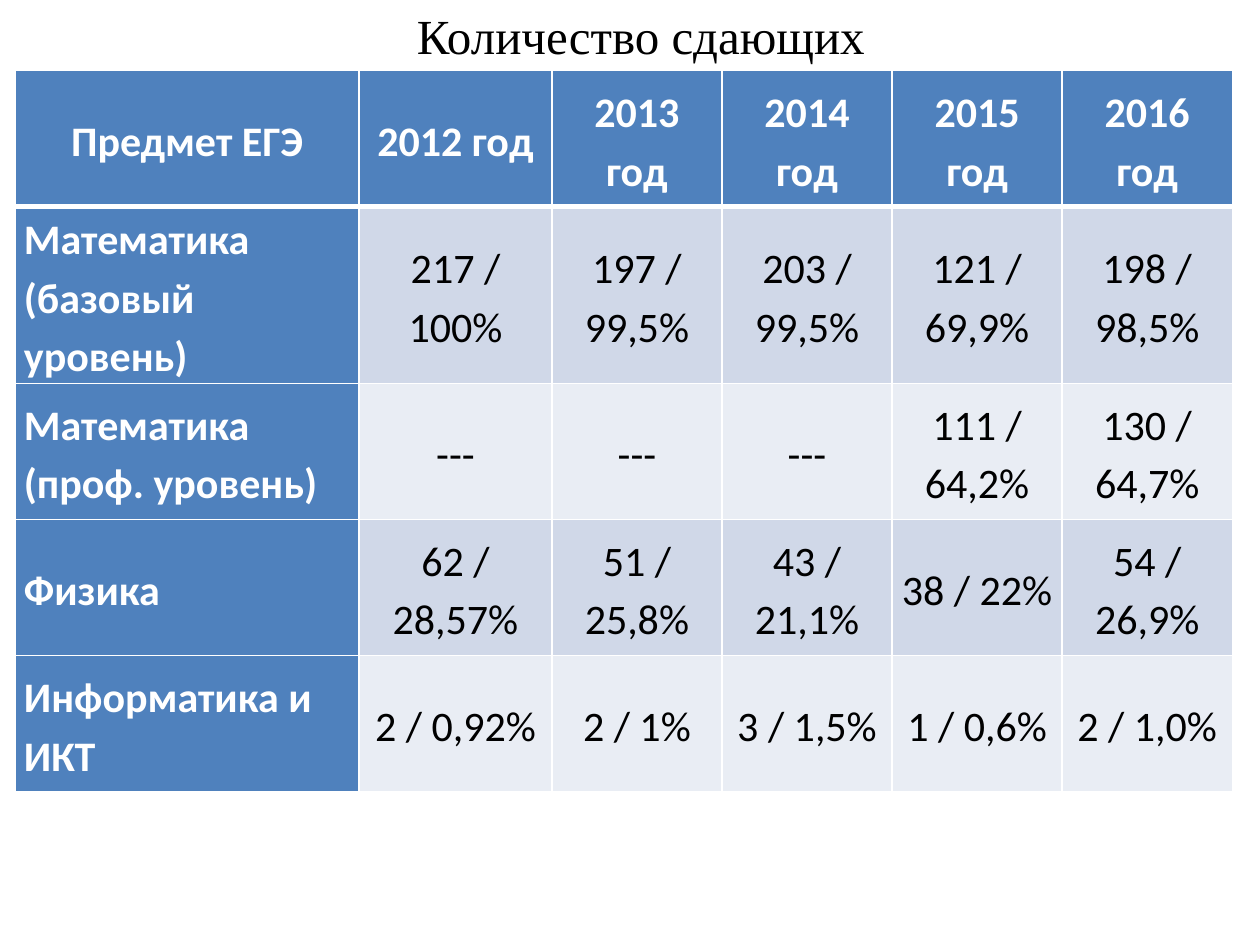
import pptx
import pptx.dml.color
import pptx.enum.text
import pptx.oxml.ns
import pptx.util
from lxml import etree

Inches = pptx.util.Inches
Pt = pptx.util.Pt
RGBColor = pptx.dml.color.RGBColor
PP_ALIGN = pptx.enum.text.PP_ALIGN
MIDDLE = pptx.enum.text.MSO_ANCHOR.MIDDLE
qn = pptx.oxml.ns.qn

# Content
TITLE = "Количество сдающих"
EXAM_ROWS = [
    ("Предмет ЕГЭ", "2012 год", "2013 год", "2014 год", "2015 год", "2016 год"),
    ("Математика (базовый уровень)", "217 / 100%", "197 / 99,5%",
     "203 / 99,5%", "121 / 69,9%", "198 / 98,5%"),
    ("Математика (проф. уровень)", "---", "---", "---", "111 / 64,2%", "130 / 64,7%"),
    ("Физика", "62 / 28,57%", "51 / 25,8%", "43 / 21,1%", "38 / 22%", "54 / 26,9%"),
    ("Информатика и ИКТ", "2 / 0,92%", "2 / 1%", "3 / 1,5%", "1 / 0,6%", "2 / 1,0%"),
]
COLUMN_WIDTHS = [2.73, 1.53] + [1.35] * 4
ROW_HEIGHT = 1.08

# Colours
BLACK = RGBColor(0x00, 0x00, 0x00)
WHITE = RGBColor(0xFF, 0xFF, 0xFF)
HEADING_BLUE = RGBColor(0x4F, 0x81, 0xBD)
BANDS = [RGBColor(0xE9, 0xED, 0xF4), RGBColor(0xD0, 0xD8, 0xE8)]


def apply_format(target, values):
    for name, value in values.items():
        setattr(target, name, value)


def add_borders(cell, widths):
    """Draw white lines on the cell's sides; call before the fill is set."""
    properties = cell._tc.get_or_add_tcPr()
    for side, width in widths.items():
        line = etree.SubElement(properties, qn(f"a:ln{side}"), w=str(Pt(width)))
        fill = etree.SubElement(line, qn("a:solidFill"))
        etree.SubElement(fill, qn("a:srgbClr"), val=str(WHITE))


def fill_cell(cell, text, row, column):
    is_heading = row == 0 or column == 0
    add_borders(cell, {"L": 1, "R": 1, "T": 3 if row == 1 else 1, "B": 3 if row == 0 else 1})
    cell.fill.solid()
    cell.fill.fore_color.rgb = HEADING_BLUE if is_heading else BANDS[row % 2]
    apply_format(cell, {
        "margin_left": Inches(0.07), "margin_right": Inches(0.07),
        "margin_top": 0, "margin_bottom": 0, "vertical_anchor": MIDDLE,
    })
    paragraph = cell.text_frame.paragraphs[0]
    is_subject = row > 0 and column == 0
    apply_format(paragraph, {
        "alignment": PP_ALIGN.LEFT if is_subject else PP_ALIGN.CENTER,
        "line_spacing": 1.15,
    })
    run = paragraph.add_run()
    run.text = text
    apply_format(run.font, {"name": "Calibri", "size": Pt(24), "bold": is_heading})
    run.font.color.rgb = WHITE if is_heading else BLACK


def main():
    deck = pptx.Presentation()
    apply_format(deck, {"slide_width": Inches(10), "slide_height": Inches(7.5)})
    slide = deck.slides.add_slide(deck.slide_layouts[6])

    # Exam table
    exams = slide.shapes.add_table(
        len(EXAM_ROWS), len(COLUMN_WIDTHS), Inches(0.12), Inches(0.56),
        Inches(sum(COLUMN_WIDTHS)), Inches(ROW_HEIGHT * len(EXAM_ROWS))).table
    for column, width in zip(exams.columns, COLUMN_WIDTHS):
        column.width = Inches(width)
    for row, texts in enumerate(EXAM_ROWS):
        exams.rows[row].height = Inches(ROW_HEIGHT)
        for column, text in enumerate(texts):
            fill_cell(exams.cell(row, column), text, row, column)

    # Title
    title = slide.shapes.add_textbox(
        Inches(3.19), Inches(-0.01), Inches(3.79), Inches(0.57)).text_frame
    apply_format(title, {
        "word_wrap": False, "vertical_anchor": MIDDLE,
        "auto_size": pptx.enum.text.MSO_AUTO_SIZE.SHAPE_TO_FIT_TEXT,
    })
    heading = title.paragraphs[0]
    heading.alignment = PP_ALIGN.CENTER
    run = heading.add_run()
    run.text = TITLE
    apply_format(run.font, {"name": "Times New Roman", "size": Pt(28)})
    run.font.color.rgb = BLACK

    deck.save("out.pptx")


if __name__ == "__main__":
    main()
